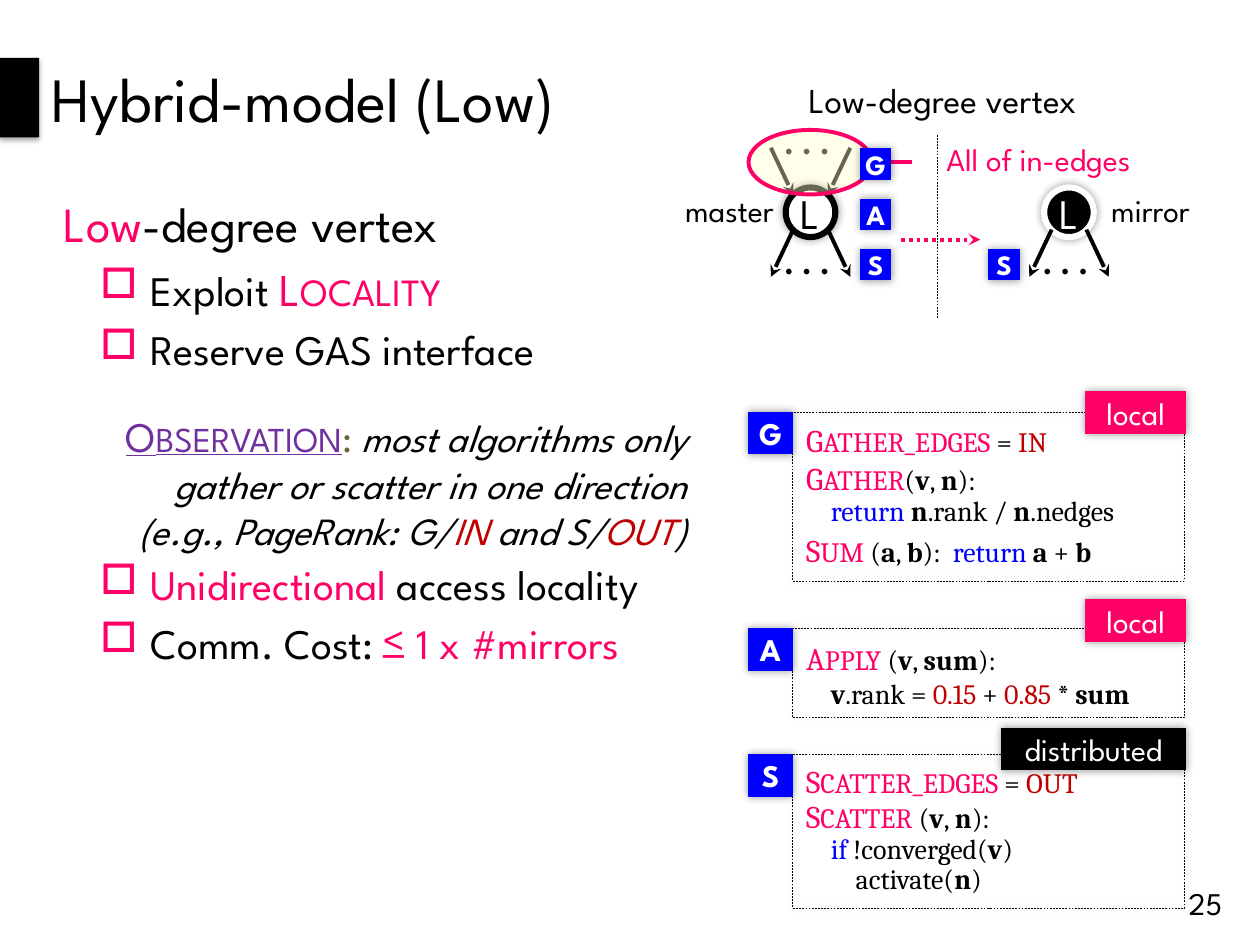
from lxml import etree
from pptx import Presentation
from pptx.dml.color import RGBColor
from pptx.enum.dml import MSO_LINE
from pptx.enum.shapes import MSO_CONNECTOR, MSO_SHAPE
from pptx.enum.text import MSO_ANCHOR, PP_ALIGN
from pptx.oxml.ns import qn
from pptx.util import Cm, Pt

RECT, OVAL = MSO_SHAPE.RECTANGLE, MSO_SHAPE.OVAL
STRAIGHT = MSO_CONNECTOR.STRAIGHT
LEFT, CENTER, RIGHT = PP_ALIGN.LEFT, PP_ALIGN.CENTER, PP_ALIGN.RIGHT
TOP, MIDDLE = MSO_ANCHOR.TOP, MSO_ANCHOR.MIDDLE
DASH, DOT = MSO_LINE.DASH, MSO_LINE.ROUND_DOT
SANS, SERIF = "League Spartan", "Cambria"
PINK, BLUE, RED, BLACK, WHITE = "FF0066", "0000FF", "C00000", "000000", "FFFFFF"

STYLES = {
    "": {},
    "pink": {"color": PINK},
    "red": {"color": RED},
    "key": {"color": BLUE},
    "bold": {"bold": True},
    "cap": {"color": PINK, "size": 18},
    "lead": {"color": PINK, "size": 26},
    "caps": {"color": PINK, "size": 22},
    "obs": {"color": "7030A0", "size": 24, "underline": True, "italic": False},
    "obs_caps": {"color": "7030A0", "size": 20, "underline": True, "italic": False},
    "colon": {"color": "666633", "italic": False},
}

BULLET = {"indent": 1.75, "hanging": 1.02, "bullet": "□", "before": 4.8}
BODY = [
    ([("Low", "pink"), "-degree vertex"], {"size": 28, "before": 5.6}),
    (["Exploit ", ("L", "lead"), ("OCALITY", "caps")], BULLET),
    (["Reserve GAS interface"], BULLET),
    ([("Unidirectional", "pink"), " access locality"], {**BULLET, "before": 105.5}),
    (["Comm. Cost: ", ("≤ 1 x #mirrors", "pink")], BULLET),
]
OBSERVATION = [
    ([("O", "obs"), ("BSERVATION", "obs_caps"), (": ", "colon"),
      "most algorithms only gather or scatter in one direction"], {}),
    (["(e.g., PageRank: G/", ("IN", "red"), " and S/", ("OUT", "red"), ")"], {}),
]

V, N, A, B, SUM = [(name, "bold") for name in ("v", "n", "a", "b", "sum")]
TIGHT = {"spacing": 0.9}
STEP = 0.5
PANELS = [
    ("G", 8.31, 3.4, ("local", PINK, 7.9, 2.01), [
        (8.36, 1.02, [([("G", "cap"), ("ATHER_EDGES", "pink"), " = ", ("IN", "red")], {})]),
        (9.22, 1.57, [
            ([("G", "cap"), ("ATHER", "pink"), "(", V, ", ", N, "):"], TIGHT),
            ([("return ", "key"), N, ".rank / ", N, ".nedges"], {**TIGHT, "indent": STEP})]),
        (10.59, 1.02, [([("S", "cap"), ("UM ", "pink"), "(", A, ", ", B, "):  ",
                         ("return ", "key"), A, " + ", B], {})])]),
    ("A", 12.67, 1.8, ("local", PINK, 12.09, 2.01), [
        (12.75, 1.7, [
            ([("A", "cap"), ("PPLY ", "pink"), "(", V, ", ", SUM, "):"], {}),
            ([V, ".rank = ", ("0.15", "red"), " + ", ("0.85", "red"), " * ", SUM],
             {"indent": STEP})])]),
    ("S", 15.21, 3.1, ("distributed", BLACK, 14.68, 3.71), [
        (15.24, 1.02, [([("S", "cap"), ("CATTER_EDGES", "pink"), " = ", ("OUT", "red")], {})]),
        (16.03, 2.18, [
            ([("S", "cap"), ("CATTER ", "pink"), "(", V, ", ", N, "):"], TIGHT),
            ([("if", "key"), " !converged(", V, ")"], {**TIGHT, "indent": STEP}),
            (["activate(", N, ")"], {**TIGHT, "indent": 2 * STEP})])]),
]
PANEL_X, PANEL_W, BADGE_W, TAG_H, TAG_RIGHT = 15.98, 7.9, 0.89, 0.84, 23.9

VERTEX_Y, RADIUS = 4.28, 0.5
VERTICES = [(16.34, WHITE, BLACK, BLACK, (-1, 1)), (21.55, BLACK, WHITE, WHITE, (1,))]
LABELS = [
    ("master", 13.11, 3.94, 2.49, RIGHT, 18, BLACK),
    ("mirror", 22.4, 3.94, 1.9, LEFT, 18, BLACK),
    ("Low-degree vertex", 15.6, 1.73, 6.81, CENTER, 20, BLACK),
    ("All of in-edges", 18.29, 2.92, 4.5, RIGHT, 18, PINK),
]
SMALL_BADGES = [("G", 17.35, 3.0), ("A", 17.35, 4.02), ("S", 17.35, 5.03), ("S", 19.94, 5.03)]


def rgb(value):
    """Turn a hex string into a colour."""
    return RGBColor.from_string(value)


def sub(parent, tag, **attrs):
    """Add a drawing element with attributes."""
    return etree.SubElement(parent, qn(tag), {k: str(v) for k, v in attrs.items()})


def write(tf, paras, size=18, color=BLACK, font=SANS, align=LEFT, anchor=TOP, inset=None,
          bold=False, italic=False, before=0, spacing=None):
    """Fill a text frame with formatted paragraphs given as a string or a list."""
    tf.word_wrap, tf.vertical_anchor = True, anchor
    if inset:
        sides = (Cm(v) for v in inset)
        tf.margin_left, tf.margin_top, tf.margin_right, tf.margin_bottom = sides
    if isinstance(paras, str):
        paras = [([paras], {})]
    for i, (runs, fmt) in enumerate(paras):
        p = tf.paragraphs[0] if i == 0 else tf.add_paragraph()
        p.alignment, p.space_before = align, Pt(fmt.get("before", before))
        if fmt.get("spacing", spacing):
            p.line_spacing = fmt.get("spacing", spacing)
        if "indent" in fmt:
            pPr = p._p.get_or_add_pPr()
            pPr.set("marL", str(Cm(fmt["indent"])))
            pPr.set("indent", str(-Cm(fmt.get("hanging", 0))))
            if "bullet" in fmt:
                sub(sub(pPr, "a:buClr"), "a:srgbClr", val=PINK)
                sub(pPr, "a:buChar", char=fmt["bullet"])
        for run in runs:
            words, style = (run, "") if isinstance(run, str) else run
            look = {"size": fmt.get("size", size), "color": color, "bold": bold,
                    "italic": italic, "underline": False, **STYLES[style]}
            r = p.add_run()
            r.text = words
            r.font.name, r.font.size = font, Pt(look["size"])
            r.font.bold, r.font.italic = look["bold"], look["italic"]
            r.font.underline = look["underline"]
            r.font.color.rgb = rgb(look["color"])


def textbox(s, box, paras, **fmt):
    """Add a text box."""
    write(s.shapes.add_textbox(*map(Cm, box)).text_frame, paras, **fmt)


def shape(s, kind, box, fill=None, line=None, width=0.75, dash=None, alpha=None,
          shadow=(40, 5, 0)):
    """Add a preset shape; shadow is opacity, blur and downward distance."""
    sp = s.shapes.add_shape(kind, *map(Cm, box))
    sp.shadow.inherit = False
    if fill:
        sp.fill.solid()
        sp.fill.fore_color.rgb = rgb(fill)
    else:
        sp.fill.background()
    if line:
        sp.line.color.rgb, sp.line.width = rgb(line), Pt(width)
        sp.line.dash_style = dash
    else:
        sp.line.fill.background()
    spPr = sp._element.spPr
    if alpha:
        sub(spPr.find(qn("a:solidFill"))[0], "a:alpha", val=alpha * 1000)
    if shadow:
        opacity, blur, dist = shadow
        outer = sub(spPr.find(qn("a:effectLst")), "a:outerShdw", blurRad=Pt(blur),
                    dist=Pt(dist), dir=5400000, algn="ctr", rotWithShape=0)
        sub(sub(outer, "a:srgbClr", val=BLACK), "a:alpha", val=opacity * 1000)
    return sp


def tag(s, box, words, fill, size=18, bold=False):
    """Add a filled rectangle with a centred white word."""
    sp = shape(s, RECT, box, fill, fill)
    write(sp.text_frame, words, size=size, color=WHITE, bold=bold, align=CENTER,
          anchor=MIDDLE, inset=(0, 0, 0, 0), before=size * 0.2)


def line(s, ends, color=BLACK, width=2.25, dash=None, arrow=True):
    """Add a straight line, with an arrowhead at its end if wanted."""
    c = s.shapes.add_connector(STRAIGHT, *map(Cm, ends))
    c.line.color.rgb, c.line.width, c.line.dash_style = rgb(color), Pt(width), dash
    if arrow:
        sub(c.line._get_or_add_ln(), "a:tailEnd", type="stealth")
    sub(c._element.spPr, "a:effectLst")


def vertex(s, cx, fill, outline, ink, sides):
    """Draw a vertex with its edges above (-1) or below (1)."""
    sp = shape(s, OVAL, (cx - RADIUS, VERTEX_Y - RADIUS, 2 * RADIUS, 2 * RADIUS),
               fill, outline, 3.5)
    write(sp.text_frame, "L", size=24, color=ink, align=CENTER, anchor=MIDDLE,
          inset=(0, 0, 0, 0))
    for side in sides:
        for way in (-1, 1):
            near = (cx + way * 0.35, VERTEX_Y + side * 0.35)
            far = (cx + way * 0.8, VERTEX_Y + side * 1.3)
            line(s, near + far if side > 0 else far + near)
        textbox(s, (cx - 0.77, VERTEX_Y + side * 1.21 - 0.36, 1.4, 0.71), ". . .",
                bold=True, align=CENTER, anchor=MIDDLE, inset=(0, 0, 0, 0.41))


def panel(s, letter, top, height, label, blocks):
    """Draw a code panel with its letter badge and its tag."""
    for y, h, paras in blocks:
        textbox(s, (16, y, PANEL_W, h), paras, size=16, font=SERIF)
    shape(s, RECT, (PANEL_X, top, PANEL_W, height), line=BLACK, width=0.25, dash=DASH)
    tag(s, (PANEL_X - BADGE_W, top, BADGE_W, TAG_H), letter, BLUE, bold=True)
    words, fill, y, w = label
    tag(s, (TAG_RIGHT - w, y, w, TAG_H), words, fill)


def main():
    """Build the slide."""
    prs = Presentation()
    prs.slide_width, prs.slide_height = Cm(25.4), Cm(19.05)
    s = prs.slides.add_slide(prs.slide_layouts[5])
    title = s.shapes.title
    title.left, title.top, title.width, title.height = map(Cm, (0.79, 0, 24.61, 3.94))
    write(title.text_frame, "Hybrid-model (Low)", size=36, anchor=MIDDLE)
    shape(s, RECT, (0, 1.17, 0.79, 1.6), BLACK, shadow=(35, 3.1, 1.8))
    textbox(s, (1.04, 3.78, 14.6, 13.74), BODY, size=24)
    textbox(s, (0.41, 8.15, 13.69, 3.18), OBSERVATION, size=22, italic=True, align=RIGHT)
    for item in PANELS:
        panel(s, *item)
    for item in VERTICES:
        vertex(s, *item)
    line(s, (18.16, 4.83, 19.76, 4.83), PINK, dash=DOT)
    line(s, (18.9, 2.72, 18.9, 6.43), width=0.25, dash=DASH, arrow=False)
    line(s, (18.39, 3.27, 17.6, 3.27), PINK)
    shape(s, OVAL, (15.09, 2.62, 2.49, 1.3), "FFFFCC", PINK, 2.25, alpha=40, shadow=None)
    for words, x, y, w, align, size, color in LABELS:
        textbox(s, (x, y, w, 0.71), words, size=size, color=color, align=align,
                anchor=MIDDLE, inset=(0, 0, 0, 0), before=size * 0.2, spacing=0.8)
    for letter, x, y in SMALL_BADGES:
        tag(s, (x, y, 0.61, 0.61), letter, BLUE, size=16, bold=True)
    textbox(s, (23.4, 17.7, 1.24, 1.02), "25", align=RIGHT, anchor=MIDDLE,
            inset=(0, 0, 0, 0))
    prs.save("out.pptx")


if __name__ == "__main__":
    main()
